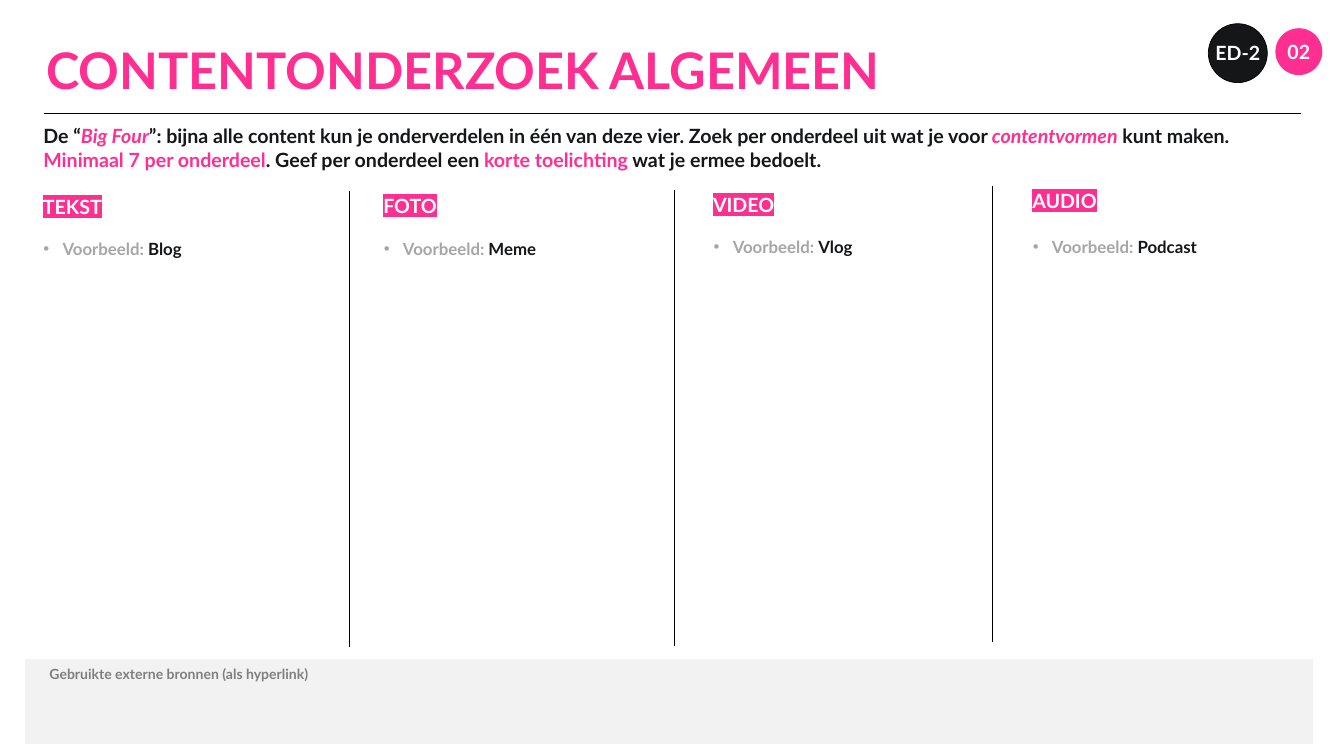
from dataclasses import dataclass

from lxml.etree import SubElement
from pptx import Presentation
from pptx.dml.color import RGBColor
from pptx.enum.shapes import MSO_CONNECTOR as Connector, MSO_SHAPE as Shape
from pptx.enum.text import MSO_ANCHOR as Anchor, MSO_AUTO_SIZE as AutoSize, PP_ALIGN as Align
from pptx.oxml import parse_xml
from pptx.oxml.ns import nsdecls, qn
from pptx.util import Pt

PX = 9144


@dataclass(frozen=True)
class Theme:
    font: str = "Lato"
    pink: str = "FF2F92"
    ink: str = "151618"
    black: str = "000000"
    white: str = "FFFFFF"
    grey: str = "A6A6A6"
    source_grey: str = "7F7F7F"
    panel: str = "F2F2F2"
    title_size: int = 72
    body_size: int = 28
    example_size: int = 24
    source_size: int = 20


THEME = Theme()

TITLE = "CONTENTONDERZOEK ALGEMEEN"
INTRO = [
    [
        ("De “", THEME.ink, False),
        ("Big Four", THEME.pink, True),
        ("”: bijna alle content kun je onderverdelen in één van deze vier. "
         "Zoek per onderdeel uit wat je voor ", THEME.ink, False),
        ("contentvormen", THEME.pink, True),
        (" kunt maken.", THEME.ink, False),
    ],
    [
        ("Minimaal 7 per onderdeel", THEME.pink, False),
        (". Geef per onderdeel een ", THEME.ink, False),
        ("korte toelichting", THEME.pink, False),
        (" wat je ermee bedoelt.", THEME.ink, False),
    ],
]
EXAMPLE_LABEL = "Voorbeeld: "
COLUMNS = [
    dict(heading="TEKST", example="Blog", left=80, top=381, example_top=468, width=291),
    dict(heading="FOTO", example="Meme", left=755, top=379, example_top=468, width=319),
    dict(heading="VIDEO", example="Vlog", left=1409, top=377, example_top=464, width=292),
    dict(heading="AUDIO", example="Podcast", left=2042, top=369, example_top=464, width=343),
]
DIVIDERS = [(692, 379), (1338, 377), (1968, 369)]
DIVIDER_HEIGHT = 905
BADGES = [
    ("ED-2", (2396, 47, 117, 117), THEME.ink, THEME.black),
    ("02", (2529, 56, 93, 93), THEME.pink, None),
]
SOURCES = "Gebruikte externe bronnen (als hyperlink)"


def emu(*lengths):
    return [length * PX for length in lengths]


def write(shape, paragraphs, size, inset=6, anchor=Anchor.MIDDLE, align=Align.LEFT,
          wrap=False, grow=True, bullet=False, highlight=None):
    frame = shape.text_frame
    frame.word_wrap = wrap
    frame.auto_size = AutoSize.SHAPE_TO_FIT_TEXT if grow else AutoSize.NONE
    frame.vertical_anchor = anchor
    frame.margin_left = frame.margin_right = inset * PX
    frame.margin_top = frame.margin_bottom = inset * PX
    for index, runs in enumerate(paragraphs):
        paragraph = frame.add_paragraph() if index else frame.paragraphs[0]
        paragraph.alignment = align
        if bullet:
            properties = paragraph._p.get_or_add_pPr()
            properties.set("marL", str(38 * PX))
            properties.set("indent", str(-38 * PX))
            SubElement(properties, qn("a:buFont"), typeface="Arial")
            SubElement(properties, qn("a:buChar"), char="•")
        for text, color, italic in runs:
            run = paragraph.add_run()
            run.text = text
            font = run.font
            font.name, font.size, font.bold, font.italic = THEME.font, Pt(size), True, italic
            font.color.rgb = RGBColor.from_string(color)
            if highlight:
                run._r.rPr.find(qn("a:solidFill")).addnext(parse_xml(
                    f'<a:highlight {nsdecls("a")}><a:srgbClr val="{highlight}"/></a:highlight>'))


def add_rule(slide, x1, y1, x2, y2):
    rule = slide.shapes.add_connector(Connector.STRAIGHT, *emu(x1, y1, x2, y2))
    rule.line.color.rgb = RGBColor.from_string(THEME.black)
    rule.line.width = Pt(1)
    SubElement(rule._element.spPr, qn("a:effectLst"))


def add_filled(slide, kind, box, fill, outline=None):
    shape = slide.shapes.add_shape(kind, *emu(*box))
    shape.shadow.inherit = False
    shape.fill.solid()
    shape.fill.fore_color.rgb = RGBColor.from_string(fill)
    if outline:
        shape.line.color.rgb = RGBColor.from_string(outline)
        shape.line.width = Pt(1)
    else:
        shape.line.fill.background()
    return shape


def add_text(slide, box, paragraphs, size, **style):
    write(slide.shapes.add_textbox(*emu(*box)), paragraphs, size, **style)


def main():
    deck = Presentation()
    deck.slide_width, deck.slide_height = emu(2665, 1500)
    slide = deck.slides.add_slide(deck.slide_layouts.get_by_name("Title Only"))

    title = slide.shapes.title
    title.left, title.top, title.width, title.height = emu(87, 73, 2047, 131)
    write(title, [[(TITLE, THEME.pink, False)]], THEME.title_size,
          inset=5, anchor=Anchor.TOP, wrap=True)
    add_rule(slide, 87, 224, 2579, 224)
    add_text(slide, (80, 240, 2408, 105), INTRO, THEME.body_size)

    for label, box, fill, outline in BADGES:
        badge = add_filled(slide, Shape.OVAL, box, fill, outline)
        write(badge, [[(label, THEME.white, False)]], THEME.body_size,
              inset=0, align=Align.CENTER, grow=False)

    for column in COLUMNS:
        left = column["left"]
        add_text(slide, (left, column["top"], 306, 58),
                 [[(column["heading"], THEME.white, False)]], THEME.body_size,
                 inset=5, anchor=Anchor.TOP, wrap=True, highlight=THEME.pink)
        add_text(slide, (left, column["example_top"], column["width"], 52),
                 [[(EXAMPLE_LABEL, THEME.grey, False), (column["example"], THEME.ink, False)]],
                 THEME.example_size, bullet=True)

    for x, top in DIVIDERS:
        add_rule(slide, x, top, x, top + DIVIDER_HEIGHT)

    add_filled(slide, Shape.RECTANGLE, (50, 1308, 2554, 168), THEME.panel)
    add_text(slide, (92, 1315, 531, 45), [[(SOURCES, THEME.source_grey, False)]],
             THEME.source_size)

    deck.save("out.pptx")


if __name__ == "__main__":
    main()
